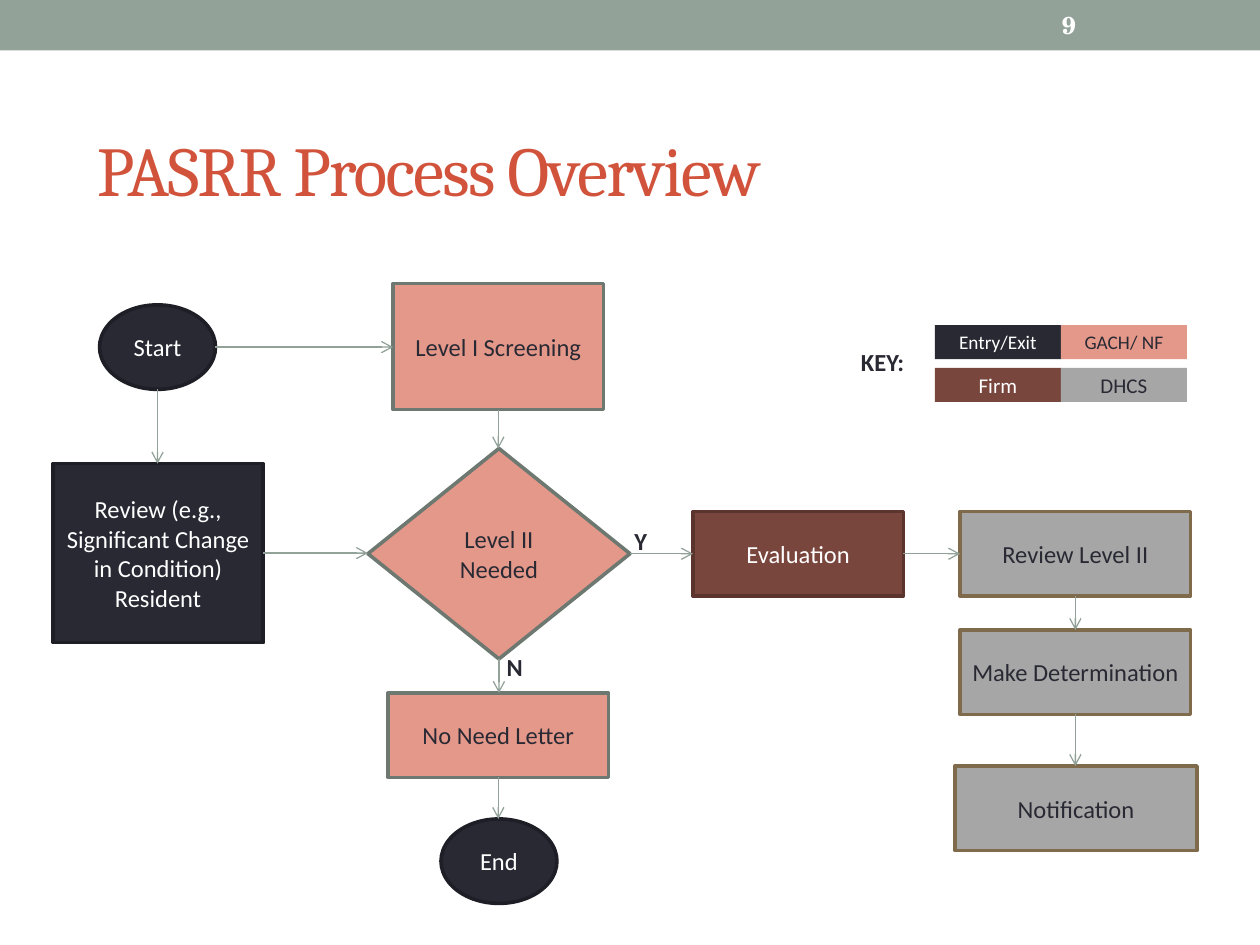
import typing

import lxml.etree
import pptx
import pptx.dml.color
import pptx.enum.shapes
import pptx.enum.text
import pptx.oxml.ns
import pptx.util

Inches = pptx.util.Inches
Pt = pptx.util.Pt
Kind = pptx.enum.shapes.MSO_SHAPE
Align = pptx.enum.text.PP_ALIGN
qn = pptx.oxml.ns.qn

INK, WHITE, SAGE = "292934", "FFFFFF", "93A299"


class Role(typing.NamedTuple):
    fill: str
    edge: str
    text: str


class Node(typing.NamedTuple):
    text: str
    role: Role
    left: float
    top: float
    width: float
    height: float
    kind: int = Kind.RECTANGLE


class Label(typing.NamedTuple):
    text: str
    left: float
    top: float
    width: float
    height: float
    size: float = 14
    color: str = INK
    face: str = "Calibri"
    bold: bool = True
    align: int = Align.CENTER
    inset: float = 0


ENTRY = Role(INK, "1E1E26", WHITE)
HOME = Role("E4988A", "6D7871", INK)
VENDOR = Role("79463D", "5A342D", WHITE)
STATE = Role("A6A6A6", "806A4C", INK)

NODES = {
    "start": Node("Start", ENTRY, 0.79, 2.42, 0.92, 0.67, Kind.OVAL),
    "change": Node("Review (e.g., Significant Change in Condition) Resident",
                   ENTRY, 0.42, 3.68, 1.67, 1.42),
    "screen": Node("Level I Screening", HOME, 3.12, 2.25, 1.67, 1),
    "need": Node("Level II Needed", HOME, 2.92, 3.56, 2.08, 1.67, Kind.DIAMOND),
    "letter": Node("No Need Letter", HOME, 3.08, 5.5, 1.75, 0.67),
    "end": Node("End", ENTRY, 3.5, 6.5, 0.92, 0.67, Kind.OVAL),
    "eval": Node("Evaluation", VENDOR, 5.5, 4.06, 1.67, 0.67),
    "review": Node("Review Level II", STATE, 7.62, 4.06, 1.83, 0.67),
    "decide": Node("Make Determination", STATE, 7.62, 5, 1.83, 0.67),
    "notice": Node("Notification", STATE, 7.58, 6.08, 1.92, 0.67),
}
ACROSS = [("start", "screen"), ("change", "need"), ("need", "eval"), ("eval", "review")]
DOWN = [("start", "change"), ("screen", "need"), ("need", "letter"),
        ("letter", "end"), ("review", "decide"), ("decide", "notice")]
KEY = [[("Entry/Exit", ENTRY), ("GACH/ NF", HOME)], [("Firm", VENDOR), ("DHCS", STATE)]]
LABELS = [
    Label("9", 8.33, 0.02, 1.17, 0.36, 14, WHITE, "TeX Gyre Schola",
          align=Align.LEFT, inset=0.1),
    Label("KEY:", 6.67, 2.58, 0.67, 0.58),
    Label("N", 3.92, 5.17, 0.33, 0.25),
    Label("Y", 4.92, 4.17, 0.33, 0.25),
]
TITLE = Label("PASRR Process Overview", 0.67, 0.75, 9, 1.17, 40, "D2533C",
              "Cambria", False, Align.LEFT, 0.1)


def paint(target: typing.Any, color: str) -> None:
    target.rgb = pptx.dml.color.RGBColor.from_string(color)


def write(shape: typing.Any, item: Label) -> None:
    frame = shape.text_frame
    side = Inches(item.inset)
    form = {"word_wrap": True, "margin_left": side, "margin_right": side,
            "margin_top": 0, "margin_bottom": 0,
            "vertical_anchor": pptx.enum.text.MSO_ANCHOR.MIDDLE}
    for name, value in form.items():
        setattr(frame, name, value)
    para = frame.paragraphs[0]
    para.alignment = item.align
    run = para.add_run()
    run.text = item.text
    for name, value in {"name": item.face, "size": Pt(item.size), "bold": item.bold}.items():
        setattr(run.font, name, value)
    paint(run.font.color, item.color)


def draw_label(slide: typing.Any, item: Label) -> typing.Any:
    box = slide.shapes.add_textbox(*map(Inches, item[1:5]))
    write(box, item)
    return box


def draw_block(slide: typing.Any, kind: int, area: tuple, fill: str) -> typing.Any:
    shape = slide.shapes.add_shape(kind, *map(Inches, area))
    shape.shadow.inherit = False
    shape.fill.solid()
    paint(shape.fill.fore_color, fill)
    shape.line.fill.background()
    return shape


def draw_node(slide: typing.Any, node: Node, size: float = 14, edge: bool = True) -> None:
    area = node[2:6]
    shape = draw_block(slide, node.kind, area, node.role.fill)
    if edge:
        shape.line.width = Pt(2.08)
        paint(shape.line.color, node.role.edge)
    write(shape, Label(node.text, *area, size, node.role.text, bold=False, inset=0.05))


def draw_arrow(slide: typing.Any, ends: tuple) -> None:
    link = slide.shapes.add_connector(
        pptx.enum.shapes.MSO_CONNECTOR.STRAIGHT, *map(Inches, ends))
    link.line.width = Pt(0.75)
    paint(link.line.color, SAGE)
    props = link.element.spPr
    lxml.etree.SubElement(props.get_or_add_ln(), qn("a:tailEnd"), type="arrow")
    lxml.etree.SubElement(props, qn("a:effectLst"))


def main() -> None:
    deck = pptx.Presentation()
    deck.slide_width, deck.slide_height = Inches(10), Inches(7.5)
    slide = deck.slides.add_slide(deck.slide_layouts[6])
    draw_block(slide, Kind.RECTANGLE, (0, 0, 10, 0.4), SAGE)
    title = draw_label(slide, TITLE)
    for props in title.element.iter(qn("a:rPr")):
        props.set("spc", "-100")
    for node in NODES.values():
        draw_node(slide, node)
    for tail, head in ACROSS:
        one, two = NODES[tail], NODES[head]
        mid = one.top + one.height / 2
        draw_arrow(slide, (one.left + one.width, mid, two.left, mid))
    for tail, head in DOWN:
        one, two = NODES[tail], NODES[head]
        mid = one.left + one.width / 2
        draw_arrow(slide, (mid, one.top + one.height, mid, two.top))
    for row, pair in enumerate(KEY):
        for col, (text, role) in enumerate(pair):
            cell = Node(text, role, 7.42 + col, 2.58 + 0.34 * row, 1, 0.27)
            draw_node(slide, cell, 11 + row, False)
    for item in LABELS:
        draw_label(slide, item)
    deck.save("out.pptx")


if __name__ == "__main__":
    main()
